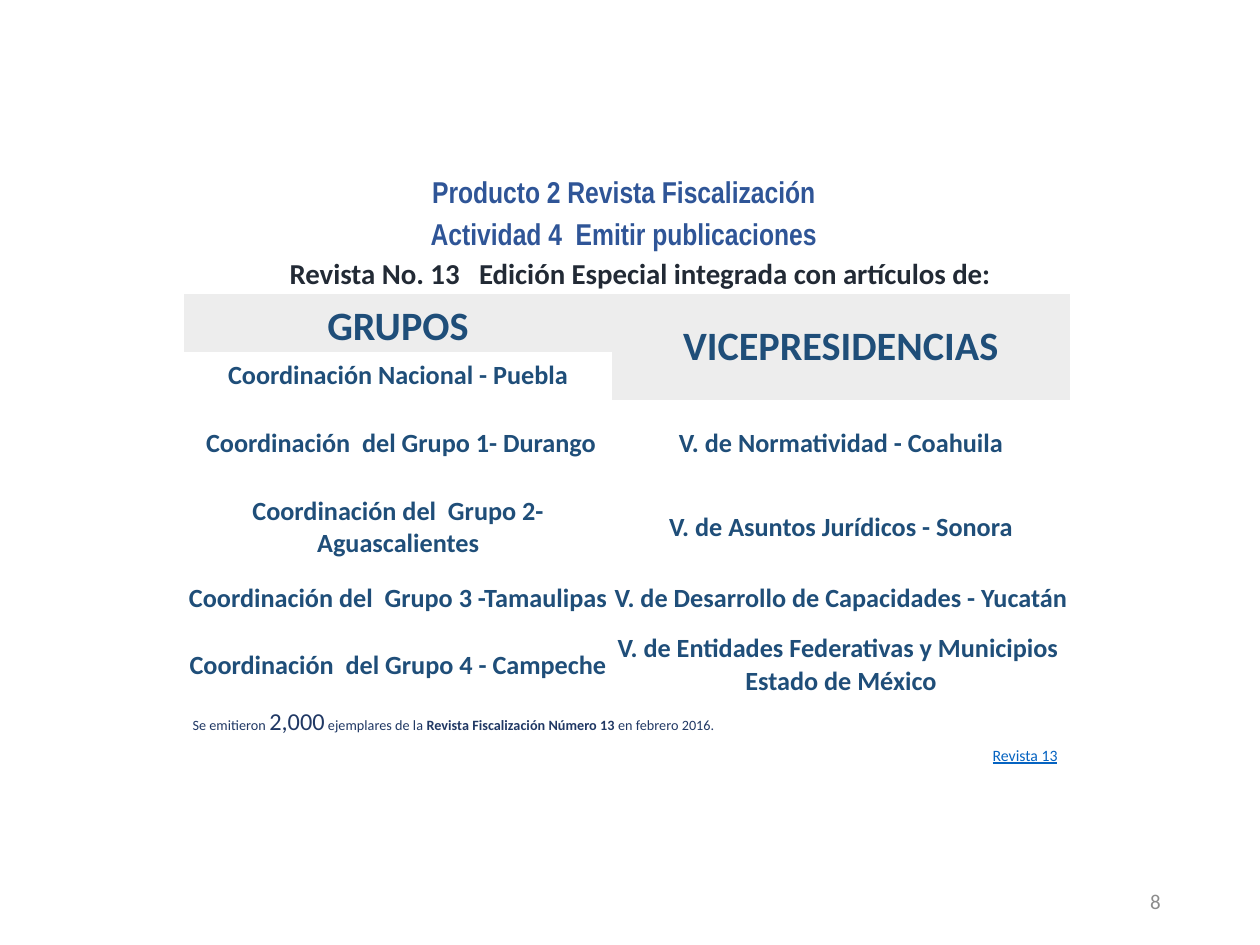
from dataclasses import dataclass

import pptx
import pptx.dml.color
import pptx.enum.text
import pptx.util
from pptx.util import Inches

ALIGN = pptx.enum.text.PP_ALIGN
ANCHOR = pptx.enum.text.MSO_ANCHOR
PLAIN_TABLE = "{2D5ABB26-0587-4C30-8999-92F81FD0307C}"


@dataclass(frozen=True)
class Theme:
    """Fonts, colours and type sizes of the slide."""
    body: str = "Calibri"
    narrow: str = "Arial Narrow"
    title: str = "2F5597"
    heading: str = "222A35"
    table: str = "1F4E79"
    note: str = "203864"
    link: str = "0563C1"
    number: str = "8C8C8C"
    header_fill: str = "EDEDED"
    title_size: float = 17.2
    heading_size: float = 16.5
    header_size: float = 23
    cell_size: float = 15
    note_size: float = 8.1
    figure_size: float = 13.9
    link_size: float = 9
    number_size: float = 12


T = Theme()

HEADERS = ["GRUPOS", "VICEPRESIDENCIAS"]
ROWS = [
    ["Coordinación Nacional - Puebla", ""],
    [" Coordinación  del Grupo 1- Durango", "V. de Normatividad - Coahuila"],
    ["Coordinación del  Grupo 2- Aguascalientes", "V. de Asuntos Jurídicos - Sonora"],
    ["Coordinación del  Grupo 3 -Tamaulipas", "V. de Desarrollo de Capacidades - Yucatán"],
    ["Coordinación  del Grupo 4 - Campeche",
     "V. de Entidades Federativas y Municipios  Estado de México"],
]
COL_WIDTHS = [3.4, 3.63]
ROW_HEIGHTS = [0.46, 0.3, 0.7, 0.63, 0.5, 0.55]


def rgb(value):
    """Return a colour from its hex value."""
    return pptx.dml.color.RGBColor.from_string(value)


def style(font, size, color, name=T.body, bold=False):
    """Set the look of a font."""
    font.name, font.size, font.bold = name, pptx.util.Pt(size), bold
    font.color.rgb = rgb(color)


def add_text(s, box, lines, size, color, name=T.body, bold=False,
             align=ALIGN.LEFT, grow=False, wrap=True):
    """Add a text box with one paragraph per line and return its frame."""
    tf = s.shapes.add_textbox(*map(Inches, box)).text_frame
    tf.word_wrap = wrap
    if grow:
        tf.auto_size = pptx.enum.text.MSO_AUTO_SIZE.SHAPE_TO_FIT_TEXT
    tf.text = "\n".join(lines)
    for p in tf.paragraphs:
        p.alignment = align
        style(p.font, size, color, name, bold)
    return tf


def add_title(s):
    """Add the two-line title with fixed line spacing."""
    tf = add_text(s, (2.75, 1.46, 4.4, 0.59),
                  ["Producto 2 Revista Fiscalización", "Actividad 4  Emitir publicaciones"],
                  T.title_size, T.title, T.narrow, True, ALIGN.CENTER)
    tf.margin_left = tf.margin_right = Inches(0.07)
    tf.margin_top = tf.margin_bottom = Inches(0.04)
    for p in tf.paragraphs:
        p.line_spacing = pptx.util.Pt(12)
    tf.paragraphs[1].space_before = pptx.util.Pt(12)


def add_note(s):
    """Add the print-run note with its large figure and bold name."""
    tf = add_text(s, (1.43, 5.56, 7.05, 0.33), [""], T.note_size, T.note,
                  align=ALIGN.JUSTIFY, grow=True)
    for text, size, bold in [
        ("Se emitieron ", T.note_size, False),
        ("2,000", T.figure_size, False),
        (" ejemplares de la ", T.note_size, False),
        ("Revista Fiscalización Número 13 ", T.note_size, True),
        ("en febrero 2016.", T.note_size, False),
    ]:
        r = tf.paragraphs[0].add_run()
        r.text = text
        style(r.font, size, T.note, bold=bold)


def fill_cell(cell, text, header):
    """Write one table cell."""
    cell.margin_left = cell.margin_right = cell.margin_top = cell.margin_bottom = 0
    cell.vertical_anchor = ANCHOR.MIDDLE
    if header:
        cell.fill.solid()
        cell.fill.fore_color.rgb = rgb(T.header_fill)
    else:
        cell.fill.background()
    cell.text = text
    p = cell.text_frame.paragraphs[0]
    p.alignment = ALIGN.CENTER
    style(p.font, T.header_size if header else T.cell_size, T.table, bold=True)


def add_articles_table(s):
    """Add the table of groups and vice-presidencies."""
    box = (1.46, 2.33, sum(COL_WIDTHS), sum(ROW_HEIGHTS))
    table = s.shapes.add_table(len(ROW_HEIGHTS), len(COL_WIDTHS), *map(Inches, box)).table
    table.first_row = table.horz_banding = False
    table._tbl.tblPr.find(pptx.oxml.ns.qn("a:tableStyleId")).text = PLAIN_TABLE
    for column, width in zip(table.columns, COL_WIDTHS):
        column.width = Inches(width)
    for row, height in zip(table.rows, ROW_HEIGHTS):
        row.height = Inches(height)
    for i, texts in enumerate([HEADERS] + ROWS):
        for j, text in enumerate(texts):
            fill_cell(table.cell(i, j), text, i == 0)
    table.cell(0, 0).vertical_anchor = ANCHOR.BOTTOM
    table.cell(0, 1).merge(table.cell(1, 1))


def main():
    """Build and save the slide."""
    prs = pptx.Presentation()
    prs.slide_width, prs.slide_height = Inches(10), Inches(7.5)
    s = prs.slides.add_slide(prs.slide_layouts[6])
    number = add_text(s, (7.06, 6.95, 2.25, 0.4), ["8"], T.number_size, T.number,
                      align=ALIGN.RIGHT)
    number.vertical_anchor = ANCHOR.MIDDLE
    add_title(s)
    add_note(s)
    add_text(s, (2.2, 1.98, 6.01, 0.38),
             ["Revista No. 13   Edición Especial integrada con artículos de:"],
             T.heading_size, T.heading, bold=True, grow=True)
    add_articles_table(s)
    link = add_text(s, (7.78, 5.87, 0.73, 0.25), ["Revista 13"], T.link_size, T.link,
                    grow=True, wrap=False)
    link.paragraphs[0].font.underline = True
    prs.save("out.pptx")


if __name__ == "__main__":
    main()
